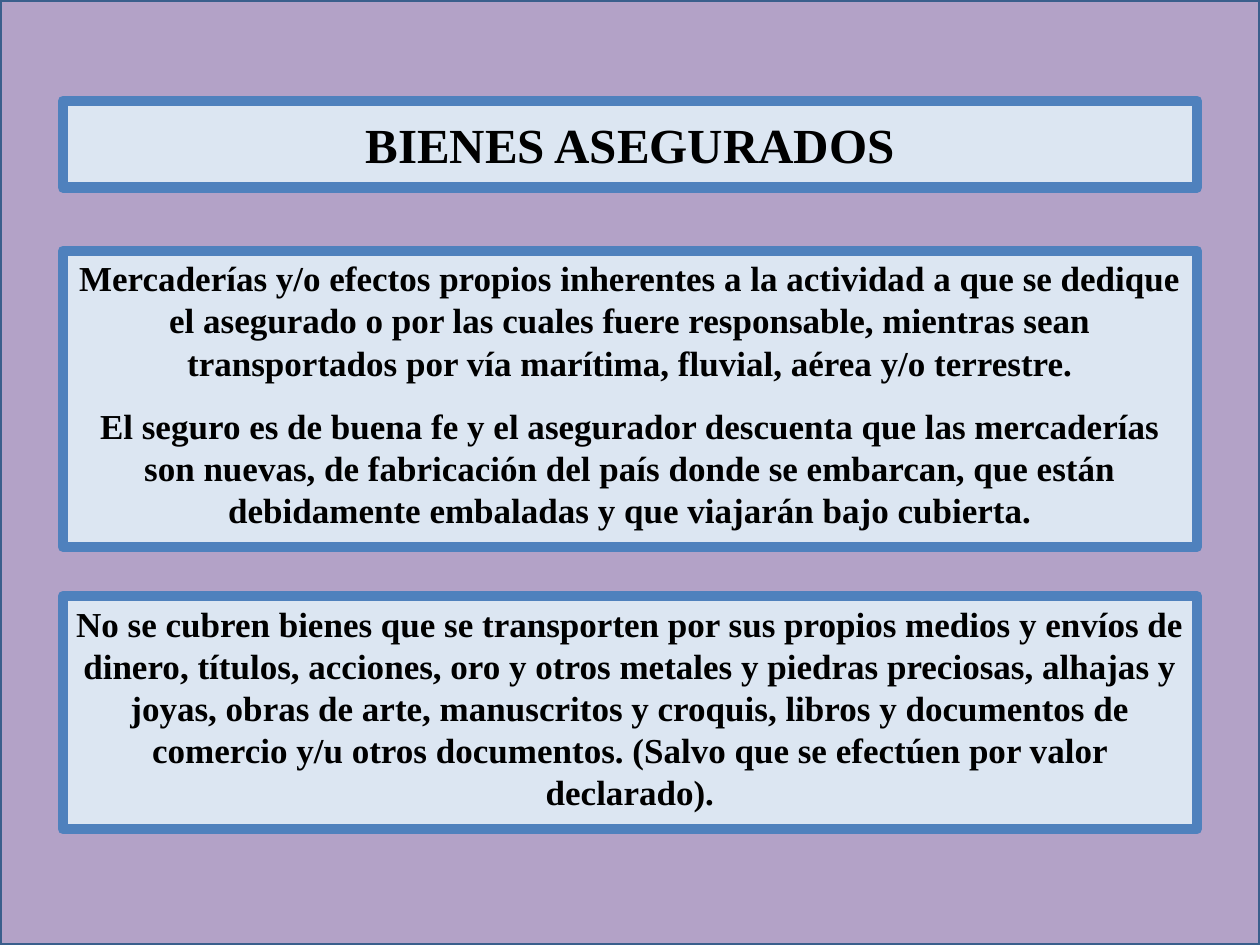
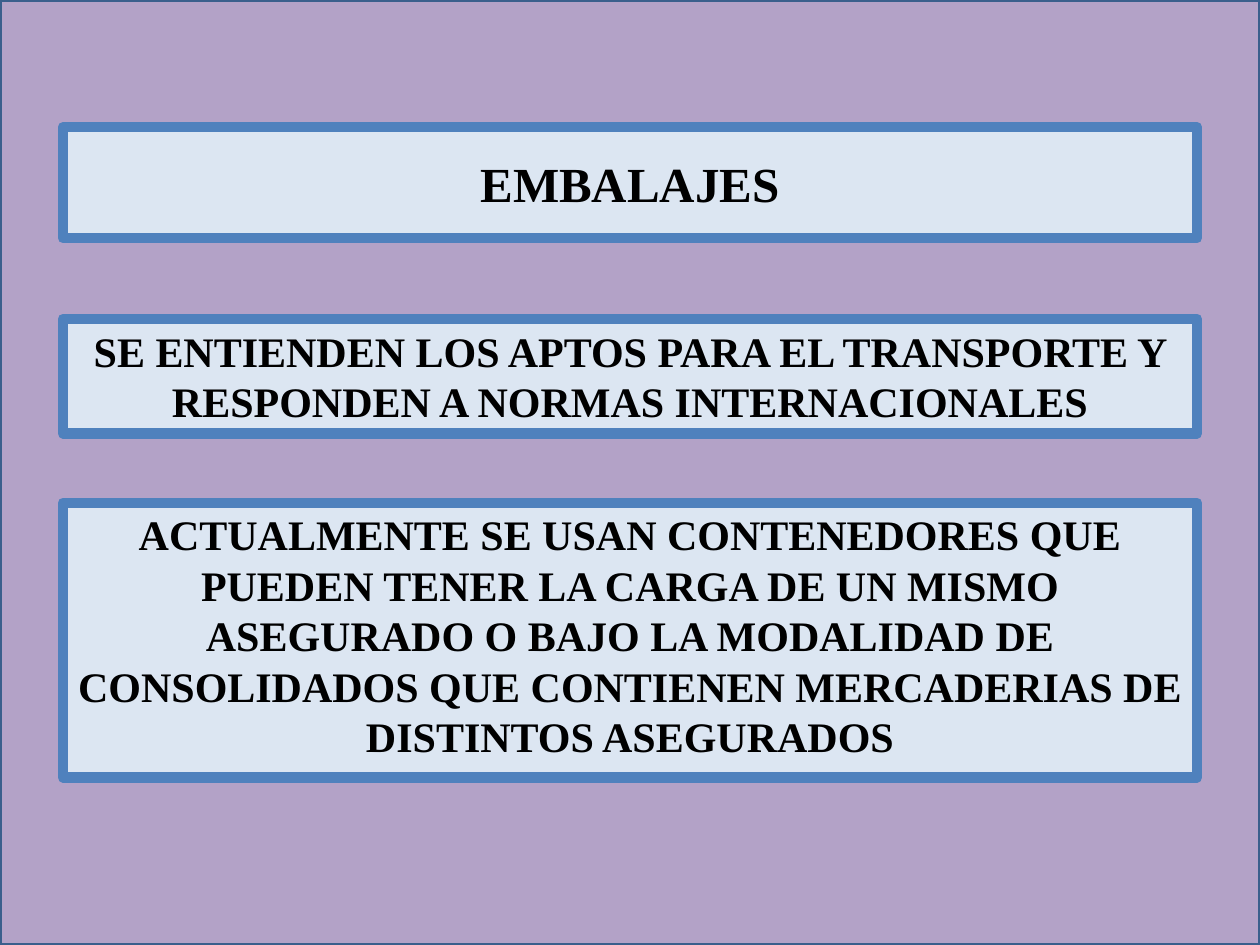
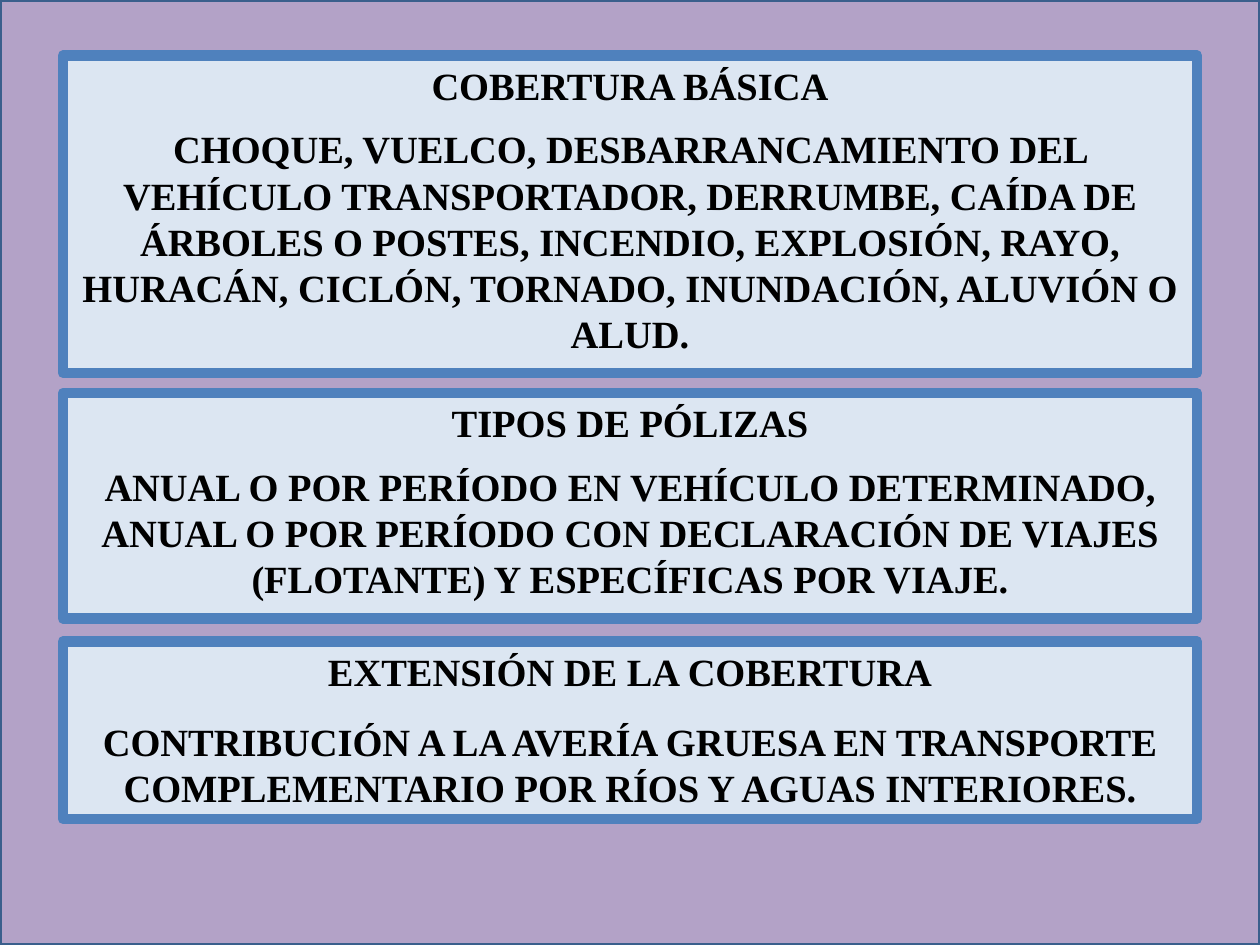
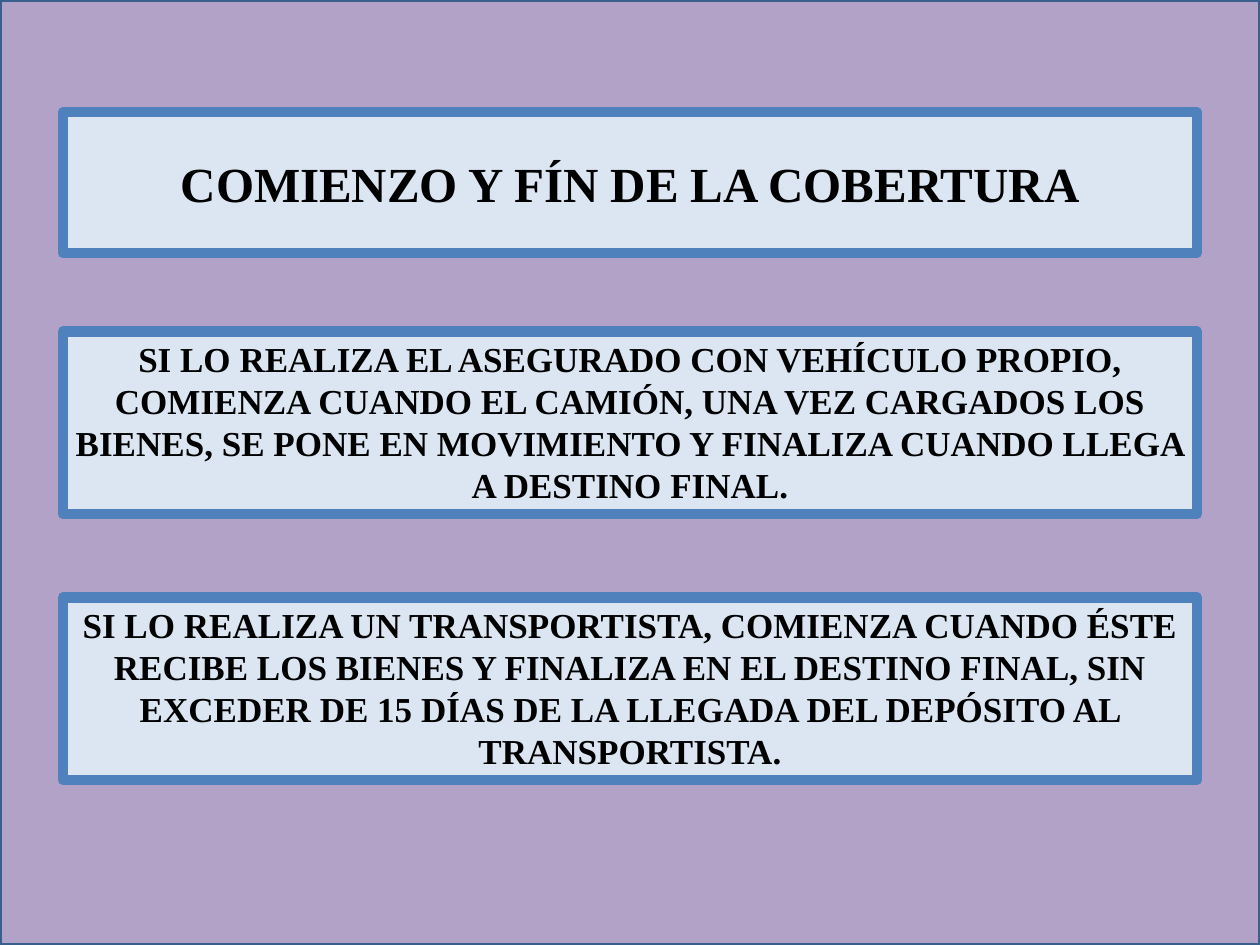
from pptx import Presentation
from pptx.dml.color import RGBColor
from pptx.enum.shapes import MSO_SHAPE
from pptx.enum.text import MSO_ANCHOR, MSO_AUTO_SIZE, PP_ALIGN
from pptx.util import Pt

RECTANGLE = MSO_SHAPE.RECTANGLE
TOP, MIDDLE = MSO_ANCHOR.TOP, MSO_ANCHOR.MIDDLE
FIXED, GROW = MSO_AUTO_SIZE.NONE, MSO_AUTO_SIZE.SHAPE_TO_FIT_TEXT
CENTER = PP_ALIGN.CENTER

WIDTH, HEIGHT = 720, 540
MARGIN = 36
FONT = "Times New Roman"
TITLE_SIZE = 28
BACKDROP, BACKDROP_LINE = "B3A2C7", "3A5F8C"
PANEL, PANEL_LINE = "DCE6F2", "4F81BD"
TEXT = "000000"


def color(value):
    """Turn a hex string into a colour."""
    return RGBColor.from_string(value)


def add_rectangle(page, left, top, width, height, fill, line, weight):
    """Draw a flat outlined rectangle."""
    box = page.shapes.add_shape(RECTANGLE, Pt(left), Pt(top), Pt(width), Pt(height))
    box.shadow.inherit = False
    box.fill.solid()
    box.fill.fore_color.rgb = color(fill)
    box.line.color.rgb = color(line)
    box.line.width = Pt(weight)
    return box


def add_page(deck):
    """Add a blank slide with the shared backdrop."""
    page = deck.slides.add_slide(deck.slide_layouts[6])
    add_rectangle(page, 0, 0, WIDTH, HEIGHT, BACKDROP, BACKDROP_LINE, 2)
    return page


def add_panel(page, top, height, size, texts, gap=0, anchor=TOP, fit=GROW):
    """Add a full-width panel of centred bold paragraphs, spaced by gap."""
    box = add_rectangle(page, MARGIN, top, WIDTH - 2 * MARGIN, height,
                        PANEL, PANEL_LINE, 6)
    frame = box.text_frame
    frame.word_wrap = True
    frame.auto_size = fit
    frame.vertical_anchor = anchor
    for index, text in enumerate(texts):
        para = frame.add_paragraph() if index else frame.paragraphs[0]
        para.alignment = CENTER
        if index:
            para.space_before = Pt(gap)
        span = para.add_run()
        span.text = text
        span.font.name = FONT
        span.font.size = Pt(size)
        span.font.bold = True
        span.font.color.rgb = color(TEXT)


def add_title(page, top, height, text):
    """Add the title panel."""
    add_panel(page, top, height, TITLE_SIZE, [text], anchor=MIDDLE, fit=FIXED)


def add_insured_goods(deck):
    """Build the slide on insured goods."""
    page = add_page(deck)
    add_title(page, 57.6, 49.7, "BIENES ASEGURADOS")
    add_panel(page, 143.3, 169.2, 20, [
        "Mercaderías y/o efectos propios inherentes a la actividad a que se dedique "
        "el asegurado o por las cuales fuere responsable, mientras sean "
        "transportados por vía marítima, fluvial, aérea y/o terrestre.",
        "El seguro es de buena fe y el asegurador descuenta que las mercaderías "
        "son nuevas, de fabricación del país donde se embarcan, que están "
        "debidamente embaladas y que viajarán bajo cubierta.",
    ], gap=12)
    add_panel(page, 340.6, 133.2, 20, [
        "No se cubren bienes que se transporten por sus propios medios y envíos de "
        "dinero, títulos, acciones, oro y otros metales y piedras preciosas, alhajas y "
        "joyas, obras de arte, manuscritos y croquis, libros y documentos de "
        "comercio y/u otros documentos. (Salvo que se efectúen por valor "
        "declarado).",
    ])


def add_packaging(deck):
    """Build the slide on packaging."""
    page = add_page(deck)
    add_title(page, 72.7, 63.4, "EMBALAJES")
    add_panel(page, 182.2, 65.5, 24, [
        "SE ENTIENDEN LOS APTOS PARA EL TRANSPORTE Y "
        "RESPONDEN A NORMAS INTERNACIONALES",
    ])
    add_panel(page, 287.3, 157, 24, [
        "ACTUALMENTE SE USAN CONTENEDORES QUE PUEDEN TENER LA CARGA DE UN MISMO "
        "ASEGURADO O BAJO LA MODALIDAD DE CONSOLIDADOS QUE CONTIENEN MERCADERIAS DE "
        "DISTINTOS ASEGURADOS",
    ])


def add_coverage(deck):
    """Build the slide on coverage and policy types."""
    page = add_page(deck)
    add_panel(page, 31.7, 181.4, 22, [
        "COBERTURA BÁSICA",
        "CHOQUE, VUELCO, DESBARRANCAMIENTO DEL VEHÍCULO TRANSPORTADOR, DERRUMBE, "
        "CAÍDA DE ÁRBOLES O POSTES, INCENDIO, EXPLOSIÓN, RAYO, HURACÁN, CICLÓN, "
        "TORNADO, INUNDACIÓN, ALUVIÓN O ALUD.",
    ], gap=10)
    add_panel(page, 224.6, 128.9, 22, [
        "TIPOS DE PÓLIZAS",
        "ANUAL O POR PERÍODO EN VEHÍCULO DETERMINADO, ANUAL O POR PERÍODO CON "
        "DECLARACIÓN DE VIAJES (FLOTANTE) Y ESPECÍFICAS POR VIAJE.",
    ], gap=10)
    add_panel(page, 366.5, 101.5, 22, [
        "EXTENSIÓN DE LA COBERTURA",
        "CONTRIBUCIÓN A LA AVERÍA GRUESA EN TRANSPORTE COMPLEMENTARIO POR RÍOS Y "
        "AGUAS INTERIORES.",
    ], gap=14)


def add_start_and_end(deck):
    """Build the slide on when coverage starts and ends."""
    page = add_page(deck)
    add_title(page, 64.1, 80.6, "COMIENZO Y FÍN DE LA COBERTURA")
    add_panel(page, 189.4, 104.4, 20, [
        "SI LO REALIZA EL ASEGURADO CON VEHÍCULO PROPIO, COMIENZA CUANDO EL CAMIÓN, "
        "UNA VEZ CARGADOS LOS BIENES, SE PONE EN MOVIMIENTO Y FINALIZA CUANDO LLEGA "
        "A DESTINO FINAL.",
    ])
    add_panel(page, 341.3, 104.4, 20, [
        "SI LO REALIZA UN TRANSPORTISTA, COMIENZA CUANDO ÉSTE RECIBE LOS BIENES Y "
        "FINALIZA EN EL DESTINO FINAL, SIN EXCEDER DE 15 DÍAS DE LA LLEGADA DEL "
        "DEPÓSITO AL TRANSPORTISTA.",
    ])


def main():
    """Build and save the deck."""
    deck = Presentation()
    deck.slide_width, deck.slide_height = Pt(WIDTH), Pt(HEIGHT)
    add_insured_goods(deck)
    add_packaging(deck)
    add_coverage(deck)
    add_start_and_end(deck)
    deck.save("out.pptx")


if __name__ == "__main__":
    main()
